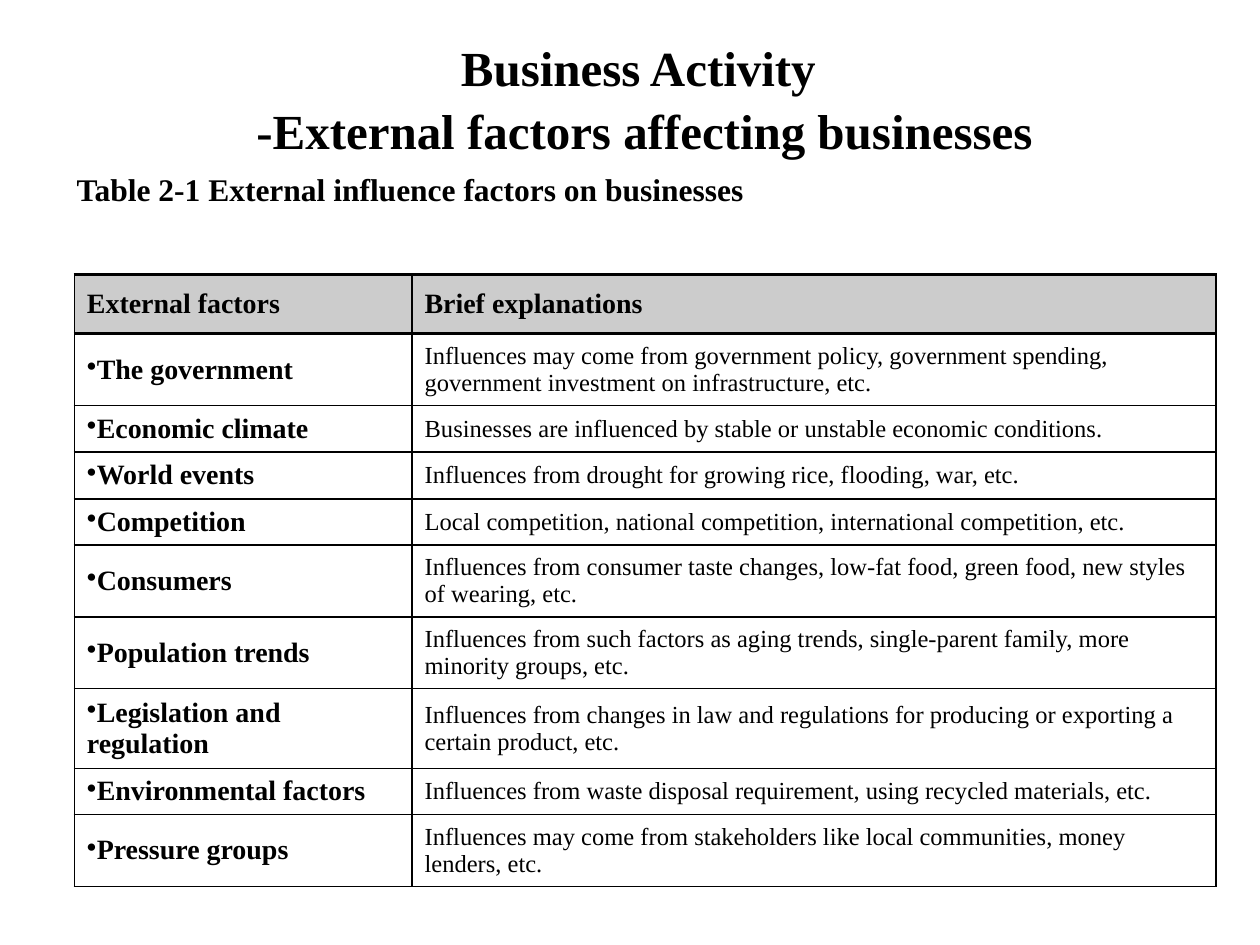
from lxml.etree import SubElement
from pptx import Presentation
from pptx.dml.color import RGBColor
from pptx.enum.text import MSO_ANCHOR as Anchor, PP_ALIGN as Align
from pptx.oxml.ns import qn
from pptx.util import Inches, Pt

BLACK = RGBColor(0x00, 0x00, 0x00)
HEADER_GRAY = RGBColor(0xCC, 0xCC, 0xCC)
FONT = "Times New Roman"


def write(frame, text, size, bold=True, align=Align.LEFT, spacing=None, bullet=False):
    frame.word_wrap = True
    paragraph = frame.paragraphs[0]
    paragraph.text = text
    paragraph.alignment = align
    if spacing:
        paragraph.line_spacing = spacing
    if bullet:
        props = paragraph._p.get_or_add_pPr()
        props.set("marL", "0")
        props.set("indent", "0")
        SubElement(props, qn("a:buChar"), char="•")
        tabs = SubElement(props, qn("a:tabLst"))
        SubElement(tabs, qn("a:tab"), pos=str(Inches(0.38)), algn="l")
    font = paragraph.font
    font.name, font.size, font.bold = FONT, Pt(size), bold
    font.color.rgb = BLACK


def add_border(cell, side, width):
    line = SubElement(cell._tc.get_or_add_tcPr(), qn(f"a:{side}"), w=str(Pt(width)))
    fill = SubElement(line, qn("a:solidFill"))
    SubElement(fill, qn("a:srgbClr"), val=str(BLACK))


prs = Presentation()
prs.slide_width, prs.slide_height = Inches(10), Inches(7.5)
slide = prs.slides.add_slide(prs.slide_layouts[6])

caption = slide.shapes.add_textbox(Inches(0.51), Inches(1.3), Inches(7.24), Inches(0.7))
write(caption.text_frame, "Table 2-1 External influence factors on businesses", 18)

factors = [
    ("External factors", "Brief explanations", 0.47),
    ("The government", "Influences may come from government policy, government spending, "
     "government investment on infrastructure, etc.", 0.57),
    ("Economic climate", "Businesses are influenced by stable or unstable economic conditions.", 0.37),
    ("World events", "Influences from drought for growing rice, flooding, war, etc.", 0.37),
    ("Competition", "Local competition, national competition, international competition, etc.", 0.36),
    ("Consumers", "Influences from consumer taste changes, low-fat food, green food, "
     "new styles of wearing, etc.", 0.57),
    ("Population trends", "Influences from such factors as aging trends, single-parent family, "
     "more minority groups, etc.", 0.57),
    ("Legislation and regulation", "Influences from changes in law and regulations for producing "
     "or exporting a certain product, etc.", 0.63),
    ("Environmental factors", "Influences from waste disposal requirement, using recycled materials, etc.", 0.36),
    ("Pressure groups", "Influences may come from stakeholders like local communities, "
     "money lenders, etc.", 0.57),
]

table = slide.shapes.add_table(
    len(factors), 2, Inches(0.59), Inches(2.18), Inches(9.06), Inches(4.84)
).table
table.first_row = table.horz_banding = False
table.columns[0].width, table.columns[1].width = Inches(2.68), Inches(6.38)

for row, (factor, explanation, height) in enumerate(factors):
    table.rows[row].height = Inches(height)
    header = row == 0
    for column, text in enumerate((factor, explanation)):
        cell = table.cell(row, column)
        cell.vertical_anchor = Anchor.MIDDLE
        is_factor = column == 0
        strong = header or is_factor
        write(cell.text_frame, text, 16 if strong else 14, bold=strong,
              bullet=is_factor and not header)
        add_border(cell, "lnL", 1)
        add_border(cell, "lnR", 1)
        add_border(cell, "lnT", 2 if row < 2 else 1)
        add_border(cell, "lnB", 2 if header else 1)
        if header:
            cell.fill.solid()
            cell.fill.fore_color.rgb = HEADER_GRAY
        else:
            cell.fill.background()

title = slide.shapes.add_textbox(Inches(0.43), Inches(0.21), Inches(9.37), Inches(1.03))
write(title.text_frame, "Business Activity \v-External factors affecting businesses", 28,
      align=Align.CENTER, spacing=1.08)

prs.save("out.pptx")
